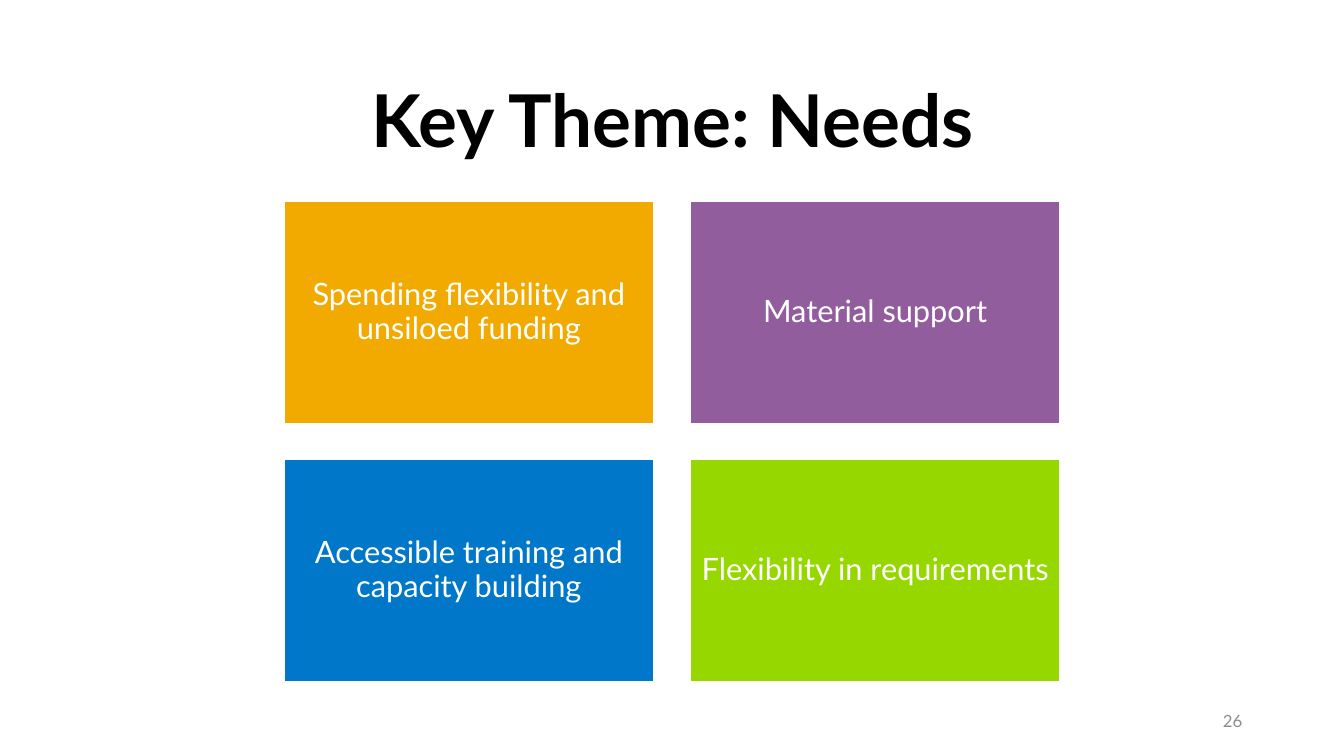
from pptx import Presentation
from pptx import util as u
from pptx.dml.color import RGBColor
from pptx.enum import shapes, text

PX = 9144
FONT = "Lato"
TITLE = "Key Theme: Needs"
PAGE_NUMBER = "26"
NEEDS = [
    ("Spending flexibility and unsiloed funding", "F2A900"),
    ("Material support", "925D9C"),
    ("Accessible training and capacity building", "0077C8"),
    ("Flexibility in requirements", "97D700"),
]
COLUMNS = 2
GRID_LEFT, GRID_TOP = 282, 200
CARD_WIDTH, CARD_HEIGHT = 366, 220
STEP_X, STEP_Y = 403, 256
CARD_INSET = 9


def px(value):
    return u.Emu(value * PX)


def color(value):
    return RGBColor.from_string(value)


def write(shape, words, size, ink, align, spacing=1.0, bold=False):
    frame = shape.text_frame
    frame.text = words
    frame.word_wrap = True
    frame.vertical_anchor = text.MSO_ANCHOR.MIDDLE
    para = frame.paragraphs[0]
    para.alignment = align
    para.line_spacing = spacing
    span = para.runs[0]
    span.font.name = FONT
    span.font.size = u.Pt(size)
    span.font.bold = bold
    span.font.color.rgb = color(ink)


def add_text(page, area, *style, **options):
    box = page.shapes.add_textbox(*map(px, area))
    write(box, *style, **options)


def add_card(page, index, words, fill):
    row, column = divmod(index, COLUMNS)
    area = (GRID_LEFT + column * STEP_X, GRID_TOP + row * STEP_Y,
            CARD_WIDTH, CARD_HEIGHT)
    card = page.shapes.add_shape(shapes.MSO_SHAPE.RECTANGLE, *map(px, area))
    card.shadow.inherit = False
    card.fill.solid()
    card.fill.fore_color.rgb = color(fill)
    card.line.color.rgb = color("FFFFFF")
    card.line.width = u.Pt(1)
    frame = card.text_frame
    frame.margin_left = frame.margin_right = px(CARD_INSET)
    frame.margin_top = frame.margin_bottom = px(CARD_INSET)
    write(card, words, 22, "FFFFFF", text.PP_ALIGN.CENTER, spacing=0.9)


def main():
    deck = Presentation()
    deck.slide_width, deck.slide_height = u.Inches(13.33), u.Inches(7.5)
    page = deck.slides.add_slide(deck.slide_layouts[6])
    add_text(page, (92, 61, 1150, 124), TITLE, 52, "000000",
             text.PP_ALIGN.CENTER, spacing=0.9, bold=True)
    for index, (words, fill) in enumerate(NEEDS):
        add_card(page, index, words, fill)
    add_text(page, (942, 695, 300, 40), PAGE_NUMBER, 12, "8C8C8C",
             text.PP_ALIGN.RIGHT)
    deck.save("out.pptx")


if __name__ == "__main__":
    main()
